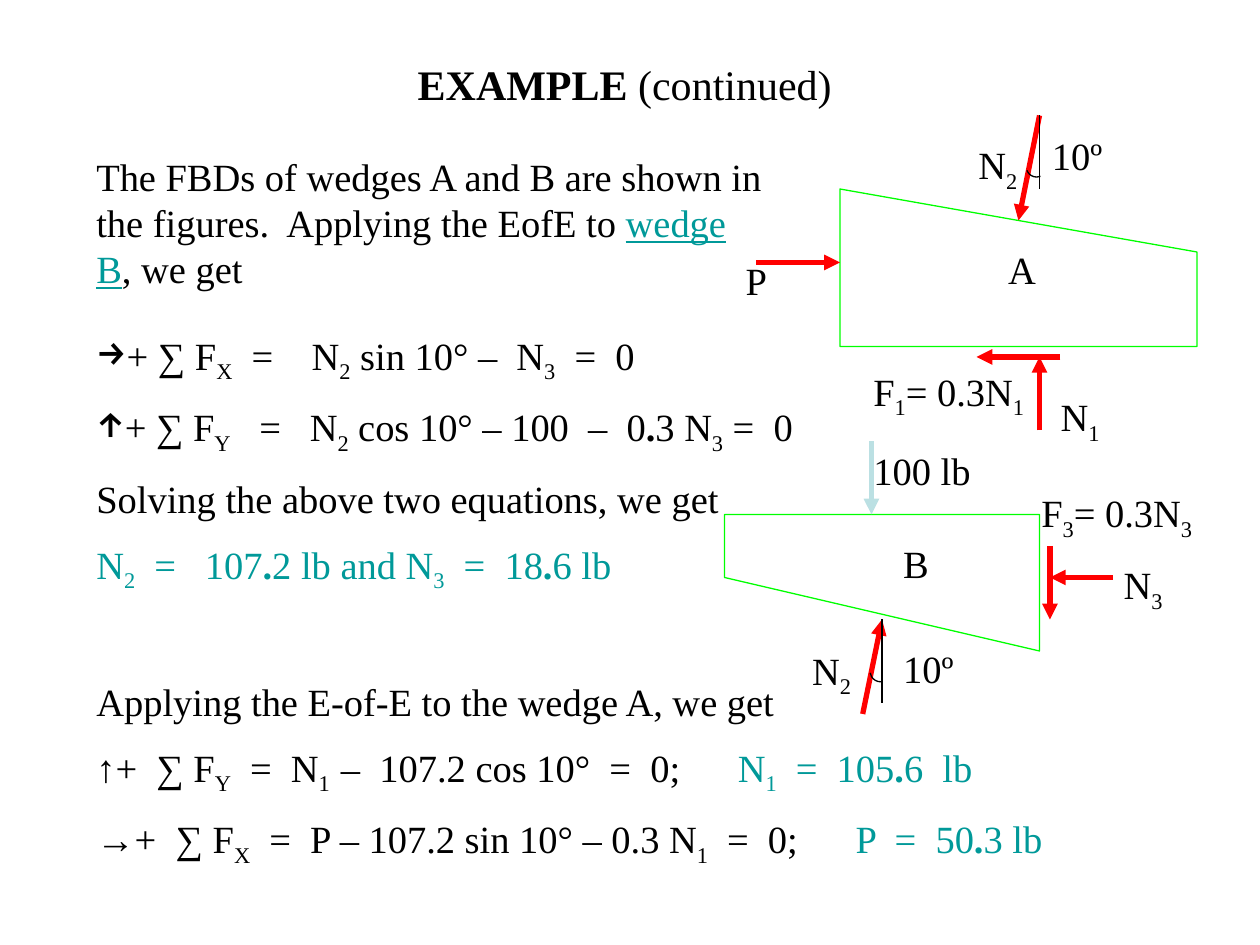
"""Build the wedge example slide with its equations and free-body diagrams."""
from lxml import etree
from pptx import Presentation
from pptx.dml.color import RGBColor
from pptx.enum import shapes, text
from pptx.oxml.ns import qn
from pptx.util import Pt

COLORS = {"ink": "000000", "result": "009999", "wedge": "00FF00",
          "force": "FF0000", "weight": "BBE0E3"}
FONT = "Times New Roman"
BODY_SIZE = 22

# Run styles: s = subscript, b = bold, t = result colour, u = underline
TITLE = [("EXAMPLE ", "b"), ("(continued)", "")]

# Each box: left, top, width, height, paragraphs of (bullet, runs)
PASSAGES = [
    (48, 84, 396, 86.4, [
        ("", [("The FBDs of wedges A and B are shown in the figures.  Applying the EofE to ", ""),
              ("wedge B", "tu"), (", we get", "")]),
    ]),
    (48, 186, 414, 152.6, [
        ("→", [("+ ∑ F", ""), ("X", "s"), ("  =    N", ""), ("2", "s"),
               (" sin 10° –  N", ""), ("3", "s"), ("  =  0", "")]),
        ("↑", [("+ ∑ F", ""), ("Y", "s"), ("   =   N", ""), ("2", "s"),
               (" cos 10° – 100  –  0", ""), (".", "b"), ("3 N", ""), ("3", "s"),
               (" =  0", "")]),
        ("", [("Solving the above two equations, we get", "")]),
        ("", [("N", "t"), ("2", "ts"), ("  =   107", "t"), (".", "tb"),
              ("2 lb and N", "t"), ("3", "ts"), ("  =  18", "t"), (".", "tb"),
              ("6 lb", "t")]),
    ]),
    (48, 384, 582, 113, [
        ("", [("Applying the E-of-E to the wedge A, we get", "")]),
        ("", [("↑+  ∑ F", ""), ("Y", "s"), ("  =  N", ""), ("1  ", "s"),
              ("–  107.2 cos 10°  =  0;      ", ""), ("N", "t"), ("1", "ts"),
              ("  =  105", "t"), (".", "tb"), ("6  lb", "t")]),
        ("", [("→+  ∑ F", ""), ("X", "s"), ("  =  P – 107.2 sin 10° – 0.3 N", ""),
              ("1", "s"), ("  =  0;      ", ""), ("P  =  50", "t"), (".", "tb"),
              ("3 lb", "t")]),
    ]),
]

WEDGES = [
    [(480, 108), (684, 144), (684, 198), (480, 198)],
    [(414, 294), (594, 294), (594, 372), (414, 330)],
]

# Each arrow: start, end, colour
ARROWS = [
    ((594, 66), (582, 126), "force"),
    ((594, 246), (594, 204), "force"),
    ((606, 204), (558, 204), "force"),
    ((432, 150), (480, 150), "force"),
    ((636, 330), (600, 330), "force"),
    ((600, 312), (600, 354), "force"),
    ((498, 252), (498, 294), "weight"),
    ((493, 408), (504, 354), "force"),
]
VERTICALS = [((594, 66), (594, 108)), ((504, 354), (504, 402))]

# Each arc: centre x, centre y, start angle of a quarter turn
ARCS = [(592.4, 95.2, 69), (503.2, 383.6, 81)]
ARC_RADIUS = 6

# Each label: left, top, width, runs
LABELS = [
    (594, 72, 43.2, [("10º", "")]),
    (552, 77, 38.2, [("N", ""), ("2", "s")]),
    (569, 137, 30.2, [("A", "")]),
    (419, 143.2, 26.6, [("P", "")]),
    (599, 221, 38.2, [("N", ""), ("1", "s")]),
    (492, 206.6, 103, [("F", ""), ("1", "s"), ("= 0.3N", ""), ("1", "s")]),
    (457, 366, 38.2, [("N", ""), ("2", "s")]),
    (509, 365, 43.2, [("10º", "")]),
    (509, 305.2, 28.8, [("B", "")]),
    (588, 276, 103, [("F", ""), ("3", "s"), ("= 0.3N", ""), ("3", "s")]),
    (635, 317, 38.2, [("N", ""), ("3", "s")]),
    (492, 252, 69.8, [("100 lb", "")]),
]
LABEL_HEIGHT = 33.8


def color(name):
    return RGBColor.from_string(COLORS[name])


def write(para, runs, size=BODY_SIZE):
    for words, style in runs:
        span = para.add_run()
        span.text = words
        font = span.font
        font.name, font.size, font.bold = FONT, Pt(size), "b" in style
        font.color.rgb = color("result" if "t" in style else "ink")
        if "u" in style:
            font.underline = True
        if "s" in style:
            font._element.set("baseline", "-25000")


def add_box(page, left, top, width, height, wrap):
    box = page.shapes.add_textbox(Pt(left), Pt(top), Pt(width), Pt(height))
    box.text_frame.word_wrap = wrap
    box.text_frame.auto_size = text.MSO_AUTO_SIZE.SHAPE_TO_FIT_TEXT
    return box.text_frame


def add_passage(page, left, top, width, height, paragraphs):
    frame = add_box(page, left, top, width, height, True)
    for index, (bullet, runs) in enumerate(paragraphs):
        para = frame.add_paragraph() if index else frame.paragraphs[0]
        para.space_before = Pt(BODY_SIZE / 2)
        if bullet:
            properties = para._p.get_or_add_pPr()
            properties.set("marL", "0")
            properties.set("indent", "0")
            etree.SubElement(properties, qn("a:buFontTx"))
            etree.SubElement(properties, qn("a:buChar")).set("char", bullet)
        write(para, runs)


def add_line(page, start, end, name, width, arrow=False):
    line = page.shapes.add_connector(
        shapes.MSO_CONNECTOR.STRAIGHT, *(Pt(value) for value in start + end))
    line.line.color.rgb = color(name)
    line.line.width = Pt(width)
    if arrow:
        etree.SubElement(line.line._get_or_add_ln(), qn("a:tailEnd")).set("type", "triangle")
    etree.SubElement(line._element.spPr, qn("a:effectLst"))


def outline(shape, name):
    shape.shadow.inherit = False
    shape.fill.background()
    shape.line.color.rgb = color(name)
    shape.line.width = Pt(0.75)


def add_wedge(page, corners):
    builder = page.shapes.build_freeform(*corners[0], scale=Pt(1))
    builder.add_line_segments(corners[1:], close=True)
    outline(builder.convert_to_shape(), "wedge")


def add_arc(page, x, y, angle):
    side = Pt(2 * ARC_RADIUS)
    arc = page.shapes.add_shape(shapes.MSO_SHAPE.ARC, Pt(x - ARC_RADIUS),
                                Pt(y - ARC_RADIUS), side, side)
    arc.adjustments[0] = angle * 0.6
    arc.adjustments[1] = (angle + 90) * 0.6
    outline(arc, "ink")


def add_title(page):
    title = page.shapes.title
    title.left, title.top, title.width, title.height = Pt(84), Pt(30), Pt(546), Pt(36)
    frame = title.text_frame
    frame.vertical_anchor = text.MSO_ANCHOR.TOP
    frame.auto_size = text.MSO_AUTO_SIZE.NONE
    frame.paragraphs[0].alignment = text.PP_ALIGN.CENTER
    write(frame.paragraphs[0], TITLE, 24)


def main():
    deck = Presentation()
    deck.slide_width, deck.slide_height = Pt(720), Pt(540)
    page = deck.slides.add_slide(deck.slide_layouts[5])
    add_title(page)
    for passage in PASSAGES:
        add_passage(page, *passage)
    for corners in WEDGES:
        add_wedge(page, corners)
    for start, end, name in ARROWS:
        add_line(page, start, end, name, 3, arrow=True)
    for start, end in VERTICALS:
        add_line(page, start, end, "ink", 0.75)
    for arc in ARCS:
        add_arc(page, *arc)
    for left, top, width, runs in LABELS:
        frame = add_box(page, left, top, width, LABEL_HEIGHT, False)
        write(frame.paragraphs[0], runs)
    deck.save("out.pptx")


if __name__ == "__main__":
    main()
